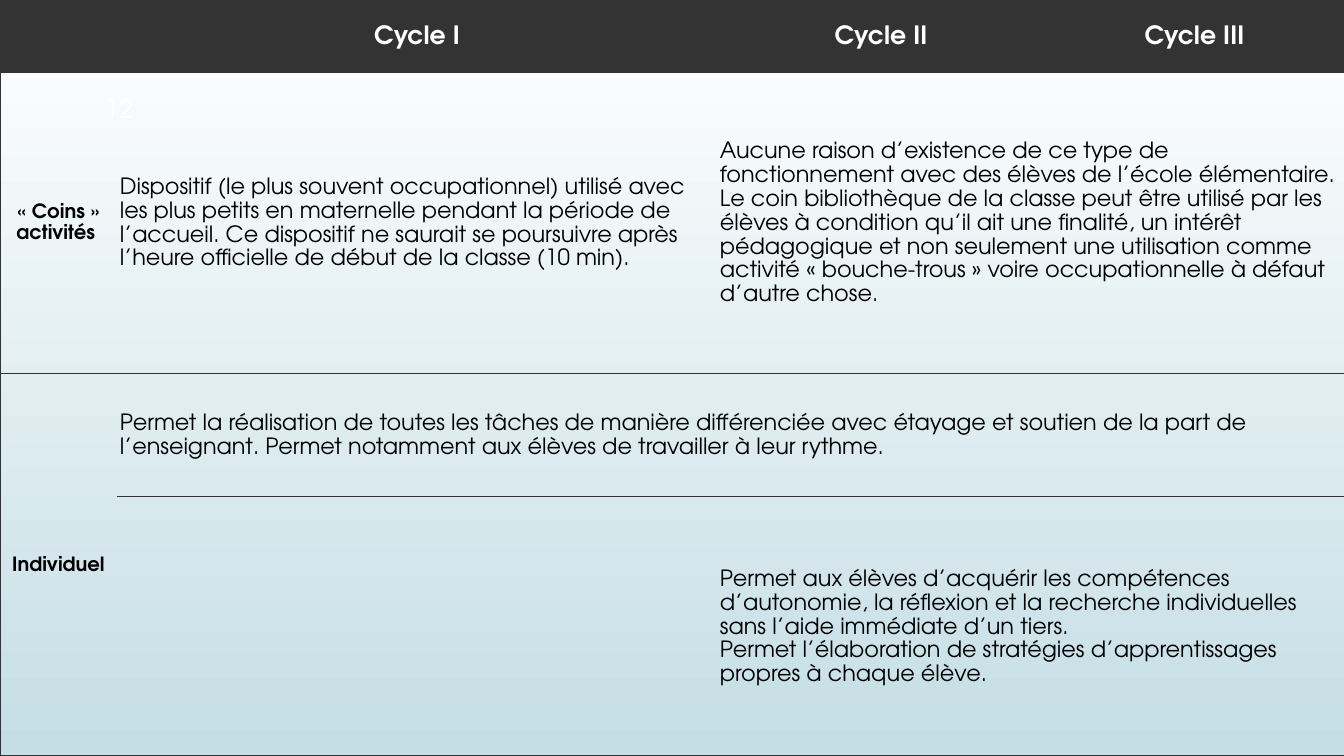
from lxml import etree
from pptx import Presentation
from pptx.dml.color import RGBColor
from pptx.enum.text import MSO_ANCHOR, PP_ALIGN
from pptx.oxml.ns import qn
from pptx.util import Pt

MIDDLE = MSO_ANCHOR.MIDDLE
LEFT, CENTER = PP_ALIGN.LEFT, PP_ALIGN.CENTER
FONT = "TeX Gyre Adventor"
DARK, WHITE, BLACK = "333333", "FFFFFF", "000000"
EMU_PER_PX = 914400 / 100.8
BORDER_WIDTH = Pt(0.75)


def px(length):
    return round(length * EMU_PER_PX)


def write(frame, text, size=16, color=BLACK, bold=False, align=LEFT, spacing=1.15):
    """Fill a text frame, one paragraph per line of text."""
    frame.word_wrap = True
    for i, line in enumerate(text.split("\n")):
        paragraph = frame.paragraphs[0] if i == 0 else frame.add_paragraph()
        paragraph.alignment = align
        paragraph.line_spacing = spacing
        run = paragraph.add_run()
        run.text = line
        run.font.name = FONT
        run.font.size = Pt(size)
        run.font.bold = bold
        run.font.color.rgb = RGBColor.from_string(color)


prs = Presentation()
prs.slide_width, prs.slide_height = px(1344), px(756)
slide = prs.slides.add_slide(prs.slide_layouts[6])

backdrop = slide.background.fill
backdrop.gradient()
backdrop.gradient_angle = 270
for stop, position, color in zip(backdrop.gradient_stops, (0, 1), (WHITE, "C5DEE5")):
    stop.position = position
    stop.color.rgb = RGBColor.from_string(color)

page_number = slide.shapes.add_textbox(px(95), px(88), px(60), px(40)).text_frame
page_number.vertical_anchor = MIDDLE
write(page_number, "12", size=18, color=WHITE, spacing=1)

column_widths = [117, 600, 328, 299]
row_heights = [72, 301, 124, 259]
last_column = len(column_widths) - 1
table = slide.shapes.add_table(
    len(row_heights), len(column_widths), 0, 0, px(1344), px(756)
).table
table.first_row = table.horz_banding = False
for column, width in zip(table.columns, column_widths):
    column.width = px(width)
for row, height in zip(table.rows, row_heights):
    row.height = px(height)

# (first row, first column): (last row, last column)
spans = {(1, 2): (1, 3), (2, 0): (3, 0), (2, 1): (2, 3), (3, 2): (3, 3)}
for first, last in spans.items():
    table.cell(*first).merge(table.cell(*last))

texts = {
    (0, 1): "Cycle I",
    (0, 2): "Cycle II",
    (0, 3): "Cycle III",
    (1, 0): "« Coins » activités ",
    (1, 1): "Dispositif (le plus souvent occupationnel) utilisé avec les plus petits en "
            "maternelle pendant la période de l’accueil. Ce dispositif ne saurait se "
            "poursuivre après l’heure officielle de début de la classe (10 min).",
    (1, 2): "Aucune raison d’existence de ce type de fonctionnement avec des élèves de "
            "l’école élémentaire.\n"
            "Le coin bibliothèque de la classe peut être utilisé par les élèves à condition "
            "qu’il ait une finalité, un intérêt pédagogique et non seulement une utilisation "
            "comme activité « bouche-trous » voire occupationnelle à défaut d’autre chose.",
    (2, 0): "Individuel",
    (2, 1): "Permet la réalisation de toutes les tâches de manière différenciée avec étayage "
            "et soutien de la part de l’enseignant. Permet notamment aux élèves de "
            "travailler à leur rythme.",
    (3, 2): "Permet aux élèves d’acquérir les compétences d’autonomie, la réflexion et la "
            "recherche individuelles sans l’aide immédiate d’un tiers.\n"
            "Permet l’élaboration de stratégies d’apprentissages propres à chaque élève.",
}

for r in range(len(row_heights)):
    for c in range(len(column_widths)):
        cell = table.cell(r, c)
        cell.vertical_anchor = MIDDLE
        cell.margin_left = cell.margin_right = px(3)
        cell.margin_top = cell.margin_bottom = 0

        right_end = spans.get((r, c), (r, c))[1]
        borders = {
            "a:lnL": c == 0,
            "a:lnR": right_end == last_column,
            "a:lnT": (r, c) != (3, 0),
            "a:lnB": True,
        }
        properties = cell._tc.get_or_add_tcPr()
        for edge, shown in borders.items():
            border = etree.SubElement(properties, qn(edge), w=str(BORDER_WIDTH))
            if shown:
                paint = etree.SubElement(border, qn("a:solidFill"))
                etree.SubElement(paint, qn("a:srgbClr"), val=DARK)
            else:
                etree.SubElement(border, qn("a:noFill"))

        if r == 0:
            cell.fill.solid()
            cell.fill.fore_color.rgb = RGBColor.from_string(DARK)
            style = dict(size=18, color=WHITE, bold=True, align=CENTER)
        else:
            cell.fill.background()
            style = dict(size=14, bold=True, align=CENTER) if c == 0 else {}
        if (r, c) in texts:
            write(cell.text_frame, texts[r, c], **style)

prs.save("out.pptx")
